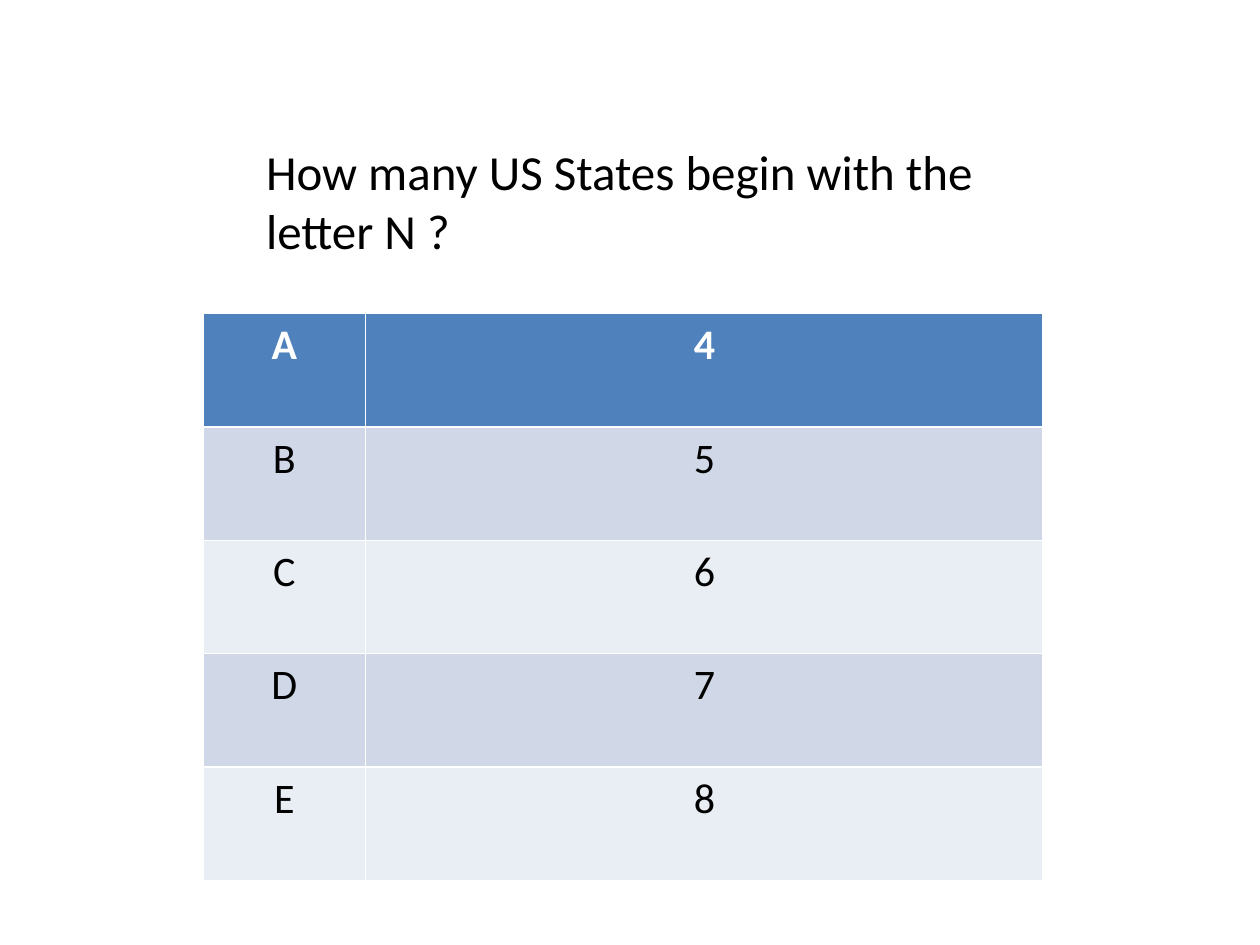
"""Build a quiz slide with a question above a table of lettered answers."""
from typing import Any, NamedTuple

from pptx import Presentation
from pptx import util as u
from pptx.dml import color
from pptx.enum import text


class Answer(NamedTuple):
    letter: str
    value: str
    fill: str
    ink: str = "000000"
    bold: bool = False


HEADER, DARK_BAND, LIGHT_BAND = "4F81BD", "D0D8E8", "E9EDF4"
ANSWERS = [
    Answer("A", "4", HEADER, "FFFFFF", True),
    Answer("B", "5", DARK_BAND),
    Answer("C", "6", LIGHT_BAND),
    Answer("D", "7", DARK_BAND),
    Answer("E", "8", LIGHT_BAND),
]
COLUMN_WIDTHS = [3.28, 13.66]


def rgb(value: str) -> color.RGBColor:
    return color.RGBColor.from_string(value)


def set_values(target: Any, values: dict[str, Any]) -> None:
    for name, value in values.items():
        setattr(target, name, value)


def write(para: Any, words: str, size: int, ink: str, bold: bool, align: Any) -> None:
    para.alignment = align
    span = para.add_run()
    span.text = words
    set_values(span.font, {"name": "Calibri", "size": u.Pt(size), "bold": bold})
    span.font.color.rgb = rgb(ink)


def draw_question(page: Any, words: str) -> None:
    box = page.shapes.title
    set_values(box, {"left": u.Cm(5.11), "top": u.Cm(2.72),
                     "width": u.Cm(15.19), "height": u.Cm(2.64)})
    set_values(box.text_frame, {
        "word_wrap": True,
        "auto_size": text.MSO_AUTO_SIZE.SHAPE_TO_FIT_TEXT,
        "vertical_anchor": text.MSO_ANCHOR.TOP,
    })
    write(box.text_frame.paragraphs[0], words, 28, "000000", False, text.PP_ALIGN.LEFT)


def draw_answers(page: Any, answers: list[Answer]) -> None:
    table = page.shapes.add_table(
        len(answers), len(COLUMN_WIDTHS), u.Cm(4.09), u.Cm(6.32),
        u.Cm(sum(COLUMN_WIDTHS)), u.Cm(11.43)).table
    for column, width in zip(table.columns, COLUMN_WIDTHS):
        column.width = u.Cm(width)
    for row, answer in zip(table.rows, answers):
        for cell, words in zip(row.cells, (answer.letter, answer.value)):
            cell.fill.solid()
            cell.fill.fore_color.rgb = rgb(answer.fill)
            write(cell.text_frame.paragraphs[0], words, 24,
                  answer.ink, answer.bold, text.PP_ALIGN.CENTER)


def main() -> None:
    deck = Presentation()
    set_values(deck, {"slide_width": u.Cm(25.4), "slide_height": u.Cm(19.05)})
    page = deck.slides.add_slide(deck.slide_layouts.get_by_name("Title Only"))
    draw_question(page, "How many US States begin with the letter N ?")
    draw_answers(page, ANSWERS)
    deck.save("out.pptx")


if __name__ == "__main__":
    main()
